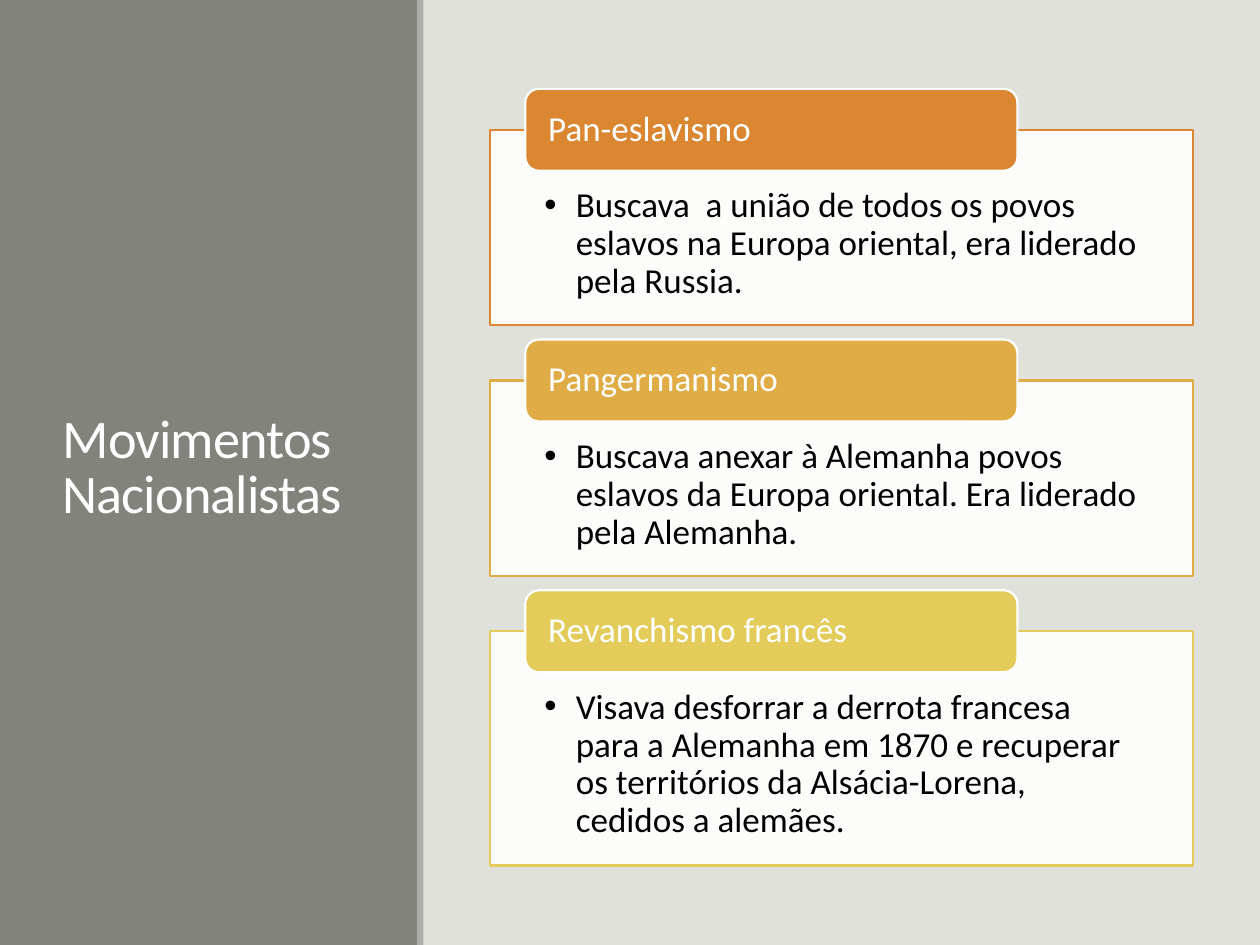
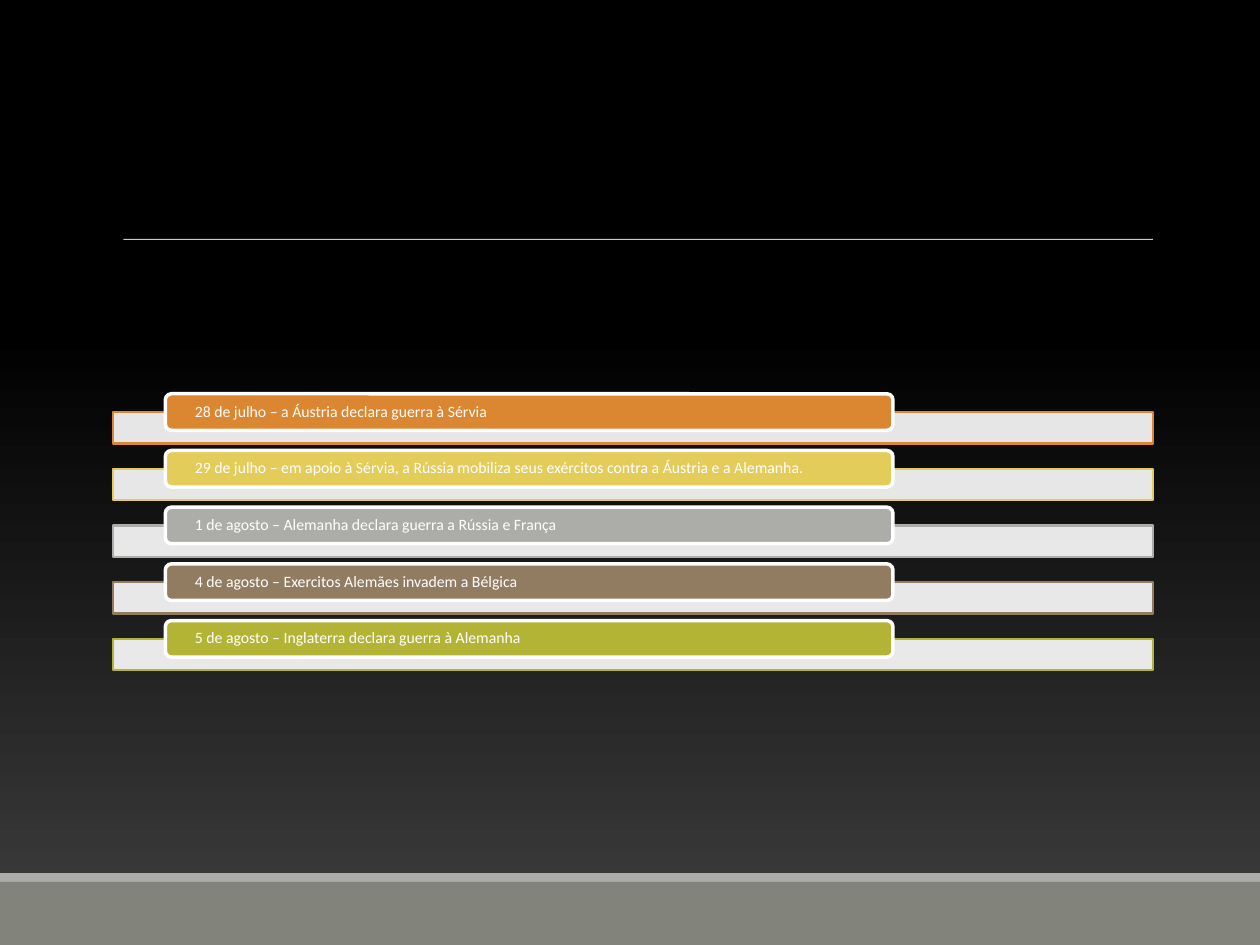
from lxml import etree
from pptx import Presentation
from pptx.dml.color import RGBColor
from pptx.enum.shapes import MSO_CONNECTOR, MSO_SHAPE
from pptx.enum.text import MSO_ANCHOR, PP_ALIGN
from pptx.oxml.ns import qn
from pptx.util import Inches, Pt

FONT = "Calibri"
SLIDE_W, SLIDE_H = 10, 7.5
WHITE, BLACK, PAPER = "FFFFFF", "000000", "E1E1DB"
OLIVE, SILVER = "82847C", "ACADA8"
ORANGE, AMBER, YELLOW = "DB8631", "DFAC45", "E3CC5A"
BROWN, LIME = "927C61", "B3B435"

# Each entry: colour, tab text, bullet text, box height
MOVEMENTS = [
    (ORANGE, "Pan-eslavismo",
     "Buscava  a união de todos os povos eslavos na Europa oriental, "
     "era liderado pela Russia.", 1.55),
    (AMBER, "Pangermanismo",
     "Buscava anexar à Alemanha povos eslavos da Europa oriental. "
     "Era liderado pela Alemanha.", 1.55),
    (YELLOW, "Revanchismo francês",
     "Visava desforrar a derrota francesa para a Alemanha em 1870 e recuperar "
     "os territórios da Alsácia-Lorena, cedidos a alemães.", 1.86),
]
DECLARATIONS = [
    (ORANGE, "28 de julho – a Áustria declara guerra à Sérvia", "", 0.25),
    (YELLOW, "29 de julho – em apoio à Sérvia, a Rússia mobiliza seus exércitos "
             "contra a Áustria e a Alemanha.", "", 0.25),
    (SILVER, "1 de agosto – Alemanha declara guerra a Rússia e França", "", 0.25),
    (BROWN, "4 de agosto – Exercitos Alemães invadem a Bélgica", "", 0.25),
    (LIME, "5 de agosto – Inglaterra declara guerra à Alemanha", "", 0.25),
]


def rgb(color):
    return RGBColor.from_string(color)


def set_alpha(fill_parent, percent):
    """Make the solid colour inside the given element partly transparent."""
    clr = fill_parent.find(".//" + qn("a:srgbClr"))
    etree.SubElement(clr, qn("a:alpha")).set("val", str(percent * 1000))


def add_box(slide, kind, x, y, w, h, fill, line=None, line_pt=1.25):
    sp = slide.shapes.add_shape(kind, Inches(x), Inches(y), Inches(w), Inches(h))
    sp.shadow.inherit = False
    sp.fill.solid()
    sp.fill.fore_color.rgb = rgb(fill)
    if line:
        sp.line.color.rgb = rgb(line)
        sp.line.width = Pt(line_pt)
    else:
        sp.line.fill.background()
    return sp


def write(sp, text, size, color, insets, anchor=MSO_ANCHOR.MIDDLE, spacing=0.9):
    """Fill a shape with one left-aligned paragraph; return it and its run."""
    tf = sp.text_frame
    tf.word_wrap = True
    tf.vertical_anchor = anchor
    tf.margin_left, tf.margin_top, tf.margin_right, tf.margin_bottom = map(Inches, insets)
    p = tf.paragraphs[0]
    p.alignment = PP_ALIGN.LEFT
    p.line_spacing = spacing
    r = p.add_run()
    r.text = text
    r.font.name = FONT
    r.font.size = Pt(size)
    r.font.color.rgb = rgb(color)
    return p, r


def add_bullet(p, indent):
    pPr = p._p.get_or_add_pPr()
    pPr.set("marL", str(Inches(indent)))
    pPr.set("indent", str(-Inches(indent)))
    etree.SubElement(pPr, qn("a:buFont")).set("typeface", "Arial")
    etree.SubElement(pPr, qn("a:buChar")).set("char", "•")


def add_tabbed_list(slide, items, x, y, w, gap, tab_h, size, tab_inset, tab_line):
    """Stack pale boxes, each with a coloured tab centred on its top edge."""
    for color, heading, detail, h in items:
        panel = add_box(slide, MSO_SHAPE.RECTANGLE, x, y, w, h, WHITE, color)
        set_alpha(panel._element.spPr, 90)
        if detail:
            p, _ = write(panel, detail, size, BLACK, (0.43, 0.46, 0.43, 0.16),
                         MSO_ANCHOR.TOP)
            add_bullet(p, 0.25)
        tab = add_box(slide, MSO_SHAPE.ROUNDED_RECTANGLE, x + 0.05 * w, y - tab_h / 2,
                      0.7 * w, tab_h, color, WHITE, tab_line)
        write(tab, heading, size, WHITE, (tab_inset, 0, tab_inset, 0))
        y += h + gap


def add_side_title(slide, w, title):
    """Dark band down the left with the title and a thin edge."""
    add_box(slide, MSO_SHAPE.RECTANGLE, 0, 0, w, SLIDE_H, OLIVE)
    tb = slide.shapes.add_textbox(Inches(0.4), Inches(0.57), Inches(w - 0.79), Inches(6.31))
    _, r = write(tb, title, 31, WHITE, (0.1, 0.05, 0.1, 0.05), spacing=0.85)
    r._r.get_or_add_rPr().set("spc", "-50")
    add_box(slide, MSO_SHAPE.RECTANGLE, w - 0.01, 0, 0.05, SLIDE_H, SILVER)


def add_footer_band(slide):
    add_box(slide, MSO_SHAPE.RECTANGLE, 0, 6.93, SLIDE_W, 0.07, SILVER)
    add_box(slide, MSO_SHAPE.RECTANGLE, 0, 7, SLIDE_W, 0.5, OLIVE)


def add_rule(slide, x1, x2, y):
    cxn = slide.shapes.add_connector(MSO_CONNECTOR.STRAIGHT, Inches(x1), Inches(y),
                                     Inches(x2), Inches(y))
    cxn.line.color.rgb = rgb(PAPER)
    cxn.line.width = Pt(0.5)
    spPr = cxn._element.spPr
    set_alpha(spPr, 90)
    etree.SubElement(spPr, qn("a:effectLst"))


def build_movements(slide):
    bg = slide.background.fill
    bg.solid()
    bg.fore_color.rgb = rgb(PAPER)
    add_side_title(slide, 3.32, "Movimentos Nacionalistas")
    add_tabbed_list(slide, MOVEMENTS, 3.89, 1.03, 5.58, gap=0.44, tab_h=0.65,
                    size=20, tab_inset=0.15, tab_line=1.25)


def build_declarations(slide):
    # Dark grey at the foot fading to black
    bg = slide.background.fill
    bg.gradient()
    bg.gradient_angle = 90
    for stop, (color, position) in zip(bg.gradient_stops, [("3F3F3F", 0), (BLACK, 0.65)]):
        stop.color.rgb = rgb(color)
        stop.position = position
    add_rule(slide, 0.98, 9.15, 1.9)
    add_footer_band(slide)
    add_tabbed_list(slide, DECLARATIONS, 0.9, 3.27, 8.25, gap=0.2, tab_h=0.29,
                    size=9, tab_inset=0.22, tab_line=2)


def main():
    prs = Presentation()
    prs.slide_width, prs.slide_height = Inches(SLIDE_W), Inches(SLIDE_H)
    for build in (build_movements, build_declarations):
        build(prs.slides.add_slide(prs.slide_layouts[6]))
    prs.save("out.pptx")


if __name__ == "__main__":
    main()
